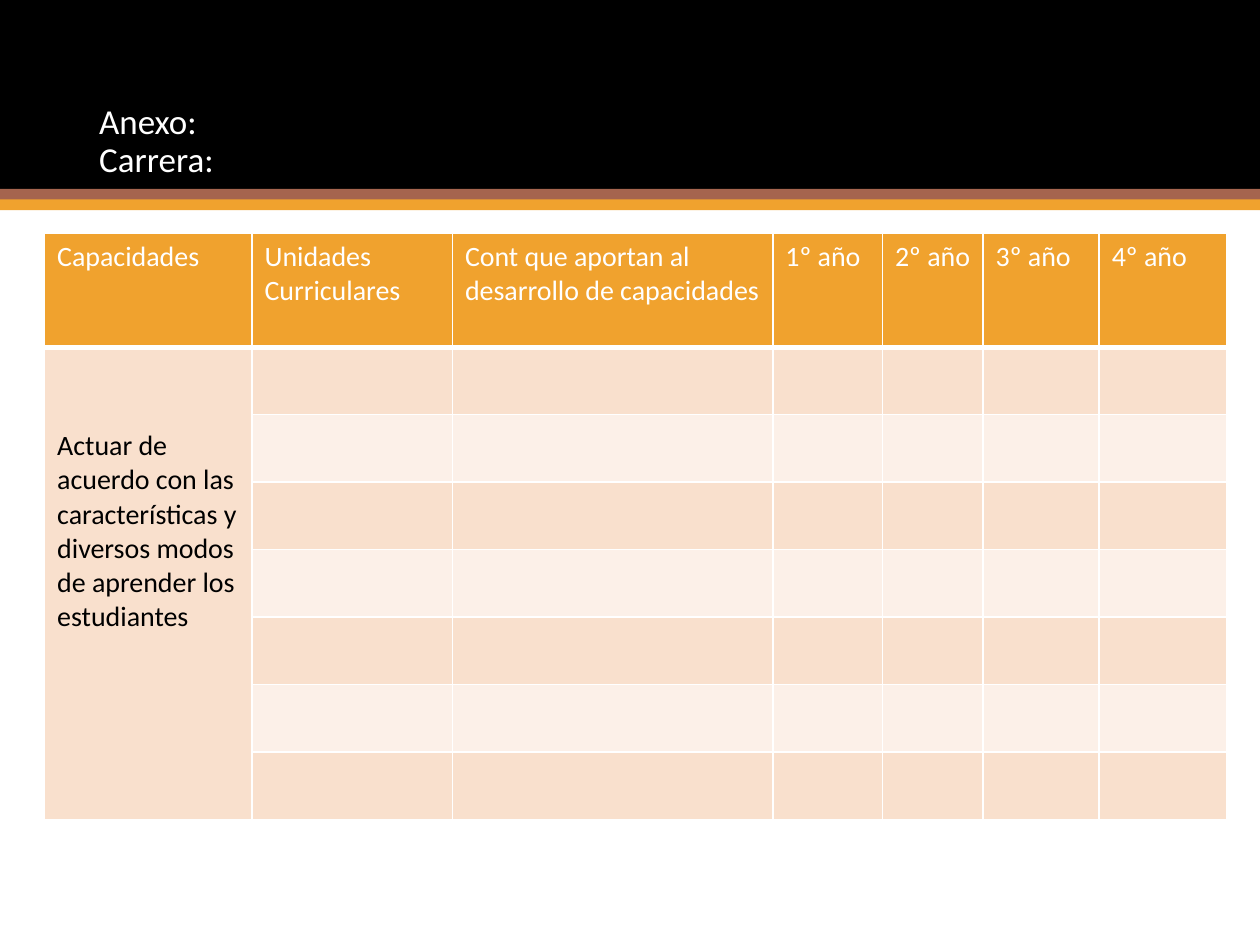
from dataclasses import dataclass

from lxml.etree import SubElement
from pptx import Presentation
from pptx.dml.color import RGBColor
from pptx.enum.shapes import MSO_SHAPE
from pptx.enum.text import MSO_ANCHOR, PP_ALIGN
from pptx.oxml.ns import qn
from pptx.util import Cm, Pt

COLORS = {
    "black": "000000",
    "white": "FFFFFF",
    "brown": "A5644E",
    "orange": "F0A22E",
    "peach": "F9E0CD",
    "pale": "FCF0E8",
}
SLIDE_WIDTH, SLIDE_HEIGHT = 25.4, 19.05
HEADERS = (
    "Capacidades",
    "Unidades Curriculares",
    "Cont que aportan al desarrollo de capacidades",
    *(f"{year}º año" for year in range(1, 5)),
)
CAPACITY = ("Actuar de acuerdo con las características y "
            "diversos modos de aprender los estudiantes")
COLUMN_WIDTHS = (4.18, 4.04, 6.46, 2.21, 2.03, 2.34, 2.57)
HEADER_HEIGHT, BODY_HEIGHT, BODY_ROWS = 2.3, 1.36, 7


@dataclass
class Band:
    top: float
    height: float
    color: str


BANDS = (
    Band(0, 3.81, "black"),
    Band(3.81, 0.22, "brown"),
    Band(4.02, 0.22, "orange"),
)


def rgb(name: str) -> RGBColor:
    return RGBColor.from_string(COLORS[name])


def write_text(text_frame, text: str, size: int, color: str):
    paragraph = text_frame.paragraphs[0]
    paragraph.text = text
    paragraph.alignment = PP_ALIGN.LEFT
    font_format = {"name": "Calibri", "size": Pt(size), "bold": False}
    for run in paragraph.runs:
        for attribute, value in font_format.items():
            setattr(run.font, attribute, value)
        run.font.color.rgb = rgb(color)
    return paragraph


def add_band(slide, band: Band) -> None:
    shape = slide.shapes.add_shape(
        MSO_SHAPE.RECTANGLE, 0, Cm(band.top), Cm(SLIDE_WIDTH), Cm(band.height))
    shape.shadow.inherit = False
    shape.fill.solid()
    shape.fill.fore_color.rgb = rgb(band.color)
    shape.line.fill.background()


def add_title(slide) -> None:
    text_box = slide.shapes.add_textbox(Cm(1.75), Cm(1.02), Cm(21.9), Cm(3.68))
    text_frame = text_box.text_frame
    text_frame.word_wrap = True
    text_frame.vertical_anchor = MSO_ANCHOR.MIDDLE
    paragraph = write_text(text_frame, "Anexo:\vCarrera:", 20, "white")
    paragraph.line_spacing = 0.9


def style_cell(cell, fill: str, borders: dict[str, float]) -> None:
    properties = cell._tc.get_or_add_tcPr()
    for side, width in borders.items():
        line = SubElement(properties, qn(f"a:ln{side}"), w=str(Pt(width)))
        solid = SubElement(line, qn("a:solidFill"))
        SubElement(solid, qn("a:srgbClr"), val=COLORS["white"])
    cell.fill.solid()
    cell.fill.fore_color.rgb = rgb(fill)


def add_capacity_table(slide) -> None:
    row_heights = (HEADER_HEIGHT,) + (BODY_HEIGHT,) * BODY_ROWS
    table = slide.shapes.add_table(
        len(row_heights), len(COLUMN_WIDTHS), Cm(0.9), Cm(4.7),
        Cm(sum(COLUMN_WIDTHS)), Cm(sum(row_heights))).table
    for column, width in zip(table.columns, COLUMN_WIDTHS):
        column.width = Cm(width)

    # Header and alternating body rows
    for row_index, height in enumerate(row_heights):
        table.rows[row_index].height = Cm(height)
        fill = ("pale", "peach")[row_index % 2] if row_index else "orange"
        borders = {"L": 1, "R": 1,
                   "T": 3 if row_index == 1 else 1,
                   "B": 1 if row_index else 3}
        for cell in table.rows[row_index].cells:
            style_cell(cell, fill, borders)
    for column_index, header in enumerate(HEADERS):
        write_text(table.cell(0, column_index).text_frame, header, 16, "white")

    # Capacity spanning all body rows
    capacity = table.cell(1, 0)
    capacity.merge(table.cell(BODY_ROWS, 0))
    capacity.margin_top = Cm(1.65)
    write_text(capacity.text_frame, CAPACITY, 16, "black")


def main() -> None:
    presentation = Presentation()
    presentation.slide_width = Cm(SLIDE_WIDTH)
    presentation.slide_height = Cm(SLIDE_HEIGHT)
    slide = presentation.slides.add_slide(presentation.slide_layouts[6])
    for band in BANDS:
        add_band(slide, band)
    add_title(slide)
    add_capacity_table(slide)
    presentation.save("out.pptx")


if __name__ == "__main__":
    main()
